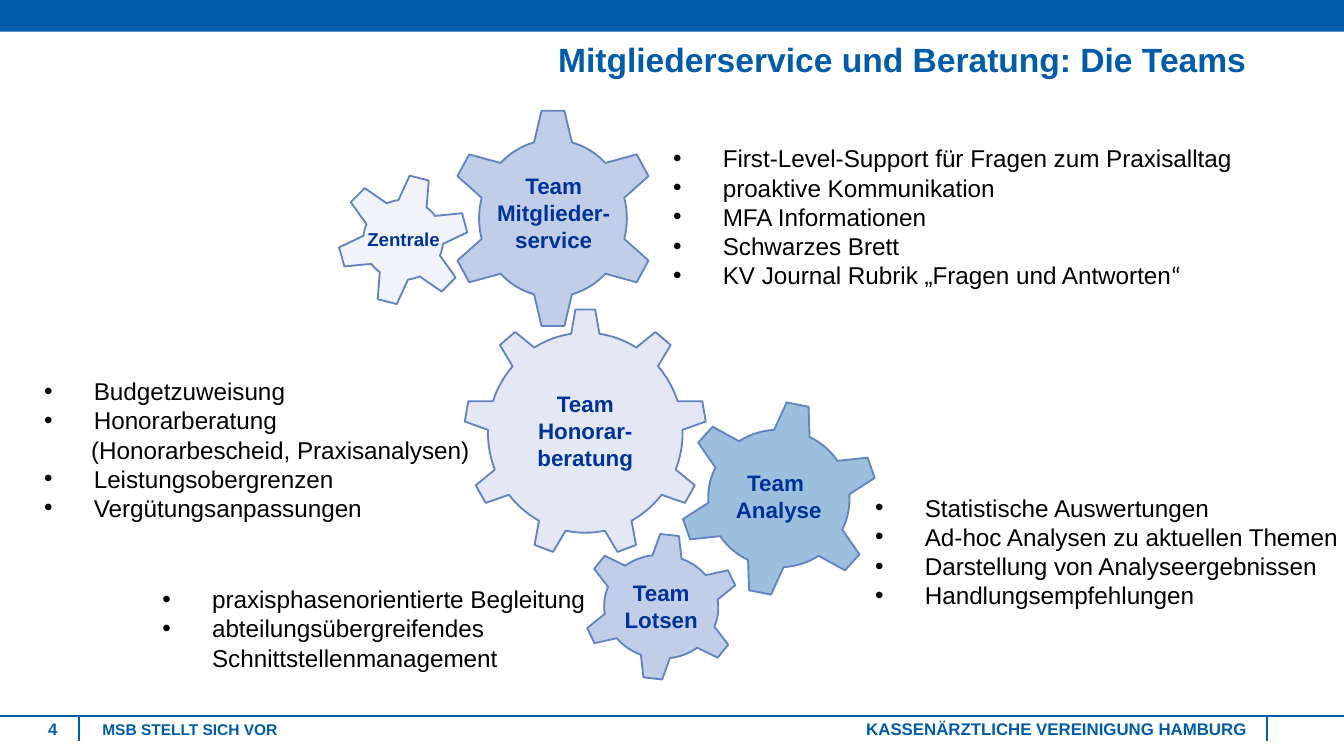
from dataclasses import dataclass

import lxml.etree
import pptx
import pptx.dml.color
import pptx.enum.shapes
import pptx.enum.text
import pptx.oxml.ns
import pptx.util

ALIGN = pptx.enum.text.PP_ALIGN
ANCHOR = pptx.enum.text.MSO_ANCHOR
SHAPE = pptx.enum.shapes.MSO_SHAPE
UNIT = pptx.util.Inches(0.1)
COLUMNS, ROWS = 100, 56.25
BLUE, NAVY, OUTLINE, BLACK = "005CA9", "003399", "6383C2", "000000"
INDENT = pptx.util.Inches(0.37)
CLOSING_QUOTE = "“"


@dataclass(frozen=True)
class Area:
    column: float
    row: float
    columns: float
    rows: float

    def lengths(self) -> list[int]:
        return [round(n * UNIT) for n in (self.column, self.row, self.columns, self.rows)]


@dataclass(frozen=True)
class Team:
    name: str
    gear: Area
    label: Area
    fill: str
    teeth: SHAPE = SHAPE.GEAR_6
    rotation: float = 0
    adjustments: tuple[float, ...] = ()
    size: float = 12
    align: ALIGN = ALIGN.CENTER


@dataclass(frozen=True)
class Duties:
    area: Area
    items: tuple[str, ...]


TEAMS = (
    Team("Team Mitglieder-service", Area(33.3, 8.05, 15.7, 16.4), Area(35.3, 12.3, 11.8, 7.1), "6383C2"),
    Team("Team\nHonorar-beratung", Area(34.5, 22.95, 18.1, 18.5), Area(37.15, 28.55, 12.8, 7.1),
         "BBC5E4", teeth=SHAPE.GEAR_9),
    Team("Team \nAnalyse", Area(50.5, 29.8, 14.9, 14.6), Area(50.45, 34.45, 15, 5), BLUE, rotation=11.3),
    Team("Team\nLotsen", Area(43.3, 39.65, 11.8, 11), Area(43.3, 42.6, 11.8, 5), "6383C2", rotation=6.7),
    Team("Zentrale", Area(25.05, 12.9, 9.9, 9.9), Area(26.35, 16.5, 8.1, 2.7), "DAE3F3",
         rotation=14.5, adjustments=(0.2, 0.035), size=10, align=ALIGN.LEFT),
)

DUTIES = (
    Duties(Area(49.1, 10.2, 44.4, 11.9), (
        "First-Level-Support für Fragen zum Praxisalltag",
        "proaktive Kommunikation",
        "MFA Informationen",
        "Schwarzes Brett",
        "KV Journal Rubrik „Fragen und Antworten“")),
    Duties(Area(2.3, 27.52, 36.4, 11.9), (
        "Budgetzuweisung",
        "Honorarberatung",
        "(Honorarbescheid, Praxisanalysen)",
        "Leistungsobergrenzen",
        "Vergütungsanpassungen")),
    Duties(Area(64.13, 36.18, 36.8, 9.8), (
        "Statistische Auswertungen",
        "Ad-hoc Analysen zu aktuellen Themen",
        "Darstellung von Analyseergebnissen",
        "Handlungsempfehlungen")),
    Duties(Area(11.1, 43, 50, 9.8), (
        "praxisphasenorientierte Begleitung",
        "abteilungsübergreifendes\vSchnittstellenmanagement")),
)


def rgb(colour: str) -> pptx.dml.color.RGBColor:
    return pptx.dml.color.RGBColor.from_string(colour)


def add_bullet(paragraph, bulleted: bool) -> None:
    properties = paragraph._p.get_or_add_pPr()
    properties.set("marL", str(INDENT if bulleted else pptx.util.Inches(0.35)))
    properties.set("indent", str(-INDENT if bulleted else 0))
    if bulleted:
        font = lxml.etree.SubElement(properties, pptx.oxml.ns.qn("a:buFont"))
        font.set("typeface", "Arial")
        lxml.etree.SubElement(properties, pptx.oxml.ns.qn("a:buChar")).set("char", "•")


def write(frame, text: str, *, size: float, colour: str, bold: bool = True,
          align: ALIGN = ALIGN.LEFT, anchor: ANCHOR = ANCHOR.TOP,
          spacing: float = 1, bullets: bool = False) -> None:
    frame.word_wrap = True
    frame.auto_size = pptx.enum.text.MSO_AUTO_SIZE.NONE
    frame.vertical_anchor = anchor
    for number, line in enumerate(text.split("\n")):
        paragraph = frame.add_paragraph() if number else frame.paragraphs[0]
        paragraph.alignment = align
        paragraph.line_spacing = spacing
        if bullets:
            add_bullet(paragraph, not line.startswith("("))
        paragraph.text = line.removesuffix(CLOSING_QUOTE)
        if line.endswith(CLOSING_QUOTE):
            paragraph.add_run().text = CLOSING_QUOTE
        for run in paragraph.runs:
            run.font.name = "Calibri" if run.text == CLOSING_QUOTE else "Arial"
            run.font.size = pptx.util.Pt(size)
            run.font.bold = bold
            run.font.color.rgb = rgb(colour)


def add_text(slide, area: Area, text: str, **text_format) -> None:
    write(slide.shapes.add_textbox(*area.lengths()).text_frame, text, **text_format)


def add_filled(slide, preset: SHAPE, area: Area, fill: str):
    shape = slide.shapes.add_shape(preset, *area.lengths())
    shape.shadow.inherit = False
    shape.fill.solid()
    shape.fill.fore_color.rgb = rgb(fill)
    return shape


def add_gear(slide, team: Team) -> None:
    gear = add_filled(slide, team.teeth, team.gear, team.fill)
    gear.rotation = team.rotation
    for number, value in enumerate(team.adjustments):
        gear.adjustments[number] = value
    colour = gear.fill._xPr.find(".//" + pptx.oxml.ns.qn("a:srgbClr"))
    lxml.etree.SubElement(colour, pptx.oxml.ns.qn("a:alpha")).set("val", "39000")
    gear.line.color.rgb = rgb(OUTLINE)
    gear.line.width = pptx.util.Pt(1)


def add_rule(slide, area: Area) -> None:
    left, top, width, height = area.lengths()
    rule = slide.shapes.add_connector(
        pptx.enum.shapes.MSO_CONNECTOR.STRAIGHT, left, top, left + width, top + height)
    rule.line.color.rgb = rgb(BLUE)
    rule.line.width = pptx.util.Pt(1)
    lxml.etree.SubElement(rule._element.spPr, pptx.oxml.ns.qn("a:effectLst"))


def add_title(slide, area: Area, text: str) -> None:
    title = slide.shapes.title
    title.left, title.top, title.width, title.height = area.lengths()
    frame = title.text_frame
    frame.margin_left = frame.margin_right = pptx.util.Inches(0.07)
    frame.margin_top = frame.margin_bottom = pptx.util.Inches(0.04)
    write(frame, text, size=18, colour=BLUE, align=ALIGN.RIGHT, anchor=ANCHOR.MIDDLE, spacing=0.9)


def add_footer(slide) -> None:
    add_rule(slide, Area(0, 53.25, COLUMNS, 0))
    for column in (5.9, 94.3):
        add_rule(slide, Area(column, 53.25, 0, 1.9))
    add_text(slide, Area(0.57, 52.75, 4.7, 3), "4", size=9, colour=BLUE,
             align=ALIGN.RIGHT, anchor=ANCHOR.MIDDLE)
    add_text(slide, Area(6.63, 53.15, 41.9, 2.2), "MSB STELLT SICH VOR", size=8.3, colour=BLUE,
             anchor=ANCHOR.MIDDLE)
    add_text(slide, Area(63.47, 52.75, 34.9, 3), "KASSENÄRZTLICHE VEREINIGUNG HAMBURG",
             size=9, colour=BLUE, anchor=ANCHOR.MIDDLE)


def main() -> None:
    deck = pptx.Presentation()
    deck.slide_width = round(COLUMNS * UNIT)
    deck.slide_height = round(ROWS * UNIT)
    slide = deck.slides.add_slide(deck.slide_layouts.get_by_name("Title Only"))
    add_filled(slide, SHAPE.RECTANGLE, Area(0, 0, COLUMNS, 2.37), BLUE).line.fill.background()
    add_title(slide, Area(4.85, 2.3, 88.6, 4.6), "Mitgliederservice und Beratung: Die Teams")
    for team in TEAMS:
        add_gear(slide, team)
    for team in TEAMS:
        add_text(slide, team.label, team.name, size=team.size, colour=NAVY, align=team.align)
    for duties in DUTIES:
        add_text(slide, duties.area, "\n".join(duties.items), size=13, colour=BLACK,
                 bold=False, bullets=True)
    add_footer(slide)
    deck.save("out.pptx")


if __name__ == "__main__":
    main()
